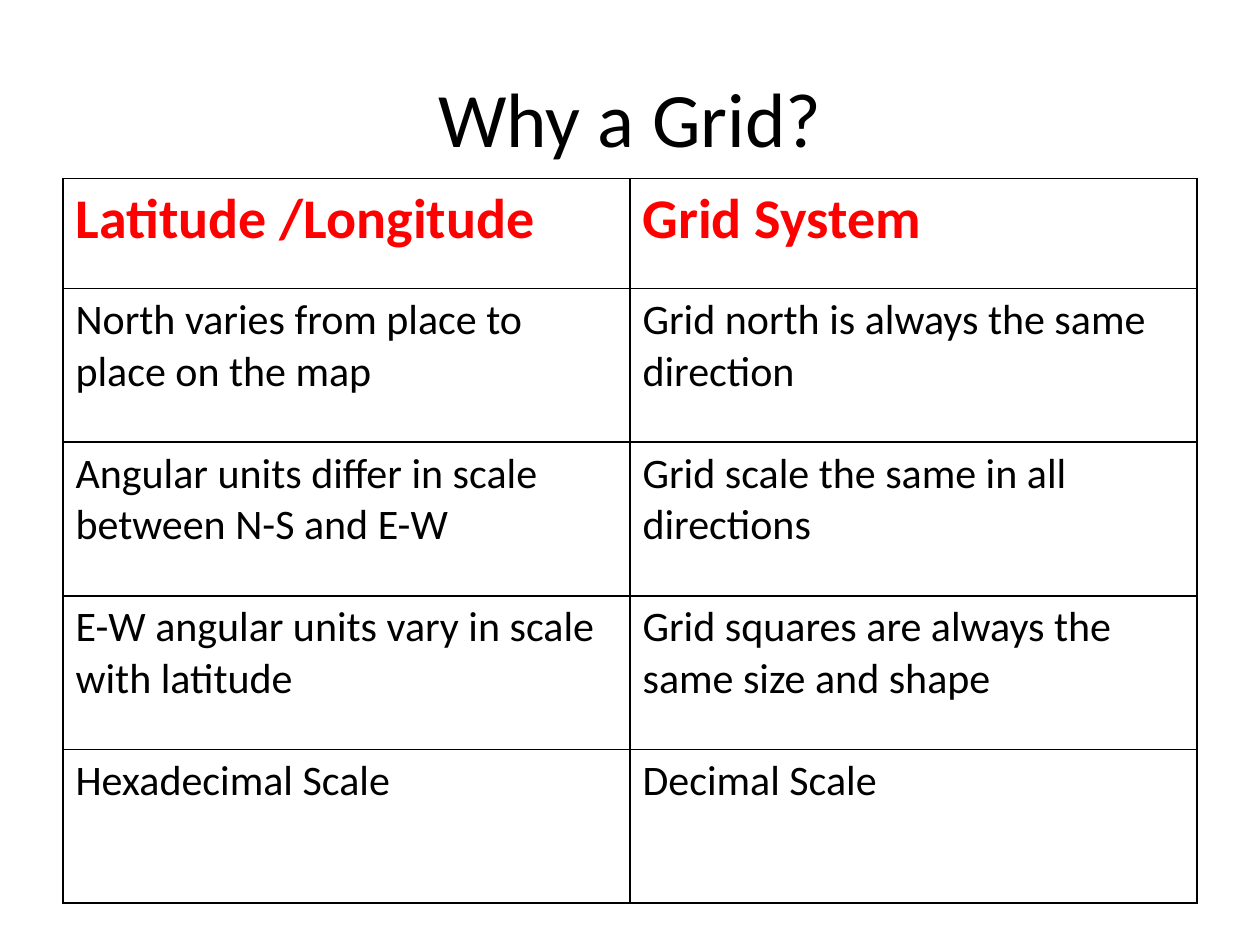
from lxml import etree
from pptx import Presentation
from pptx import util as u
from pptx.dml.color import RGBColor
from pptx.enum import text as t
from pptx.oxml import ns

BLACK = RGBColor(0, 0, 0)
WHITE = RGBColor(255, 255, 255)
RED = RGBColor(255, 0, 0)

ROWS = [
    ("Latitude /Longitude", "Grid System"),
    ("North varies from place to place on the map",
     "Grid north is always the same direction"),
    ("Angular units differ in scale between N-S and E-W",
     "Grid scale the same in all directions"),
    ("E-W angular units vary in scale with latitude",
     "Grid squares are always the same size and shape"),
    ("Hexadecimal Scale", "Decimal Scale"),
]


def write(frame, words, font="Calibri", size=24, color=BLACK, bold=False,
          align=t.PP_ALIGN.LEFT):
    """Put one formatted paragraph in a text frame."""
    para = frame.paragraphs[0]
    para.alignment = align
    run = para.add_run()
    run.text = words
    run.font.name = font
    run.font.size = u.Pt(size)
    run.font.color.rgb = color
    run.font.bold = bold


def border(cell, color=BLACK, width=1):
    """Draw a solid line on all four sides of a cell."""
    props = cell._tc.get_or_add_tcPr()
    for side in ("lnL", "lnR", "lnT", "lnB"):
        line = etree.SubElement(props, ns.qn("a:" + side), w=str(u.Pt(width)))
        fill = etree.SubElement(line, ns.qn("a:solidFill"))
        etree.SubElement(fill, ns.qn("a:srgbClr"), val=str(color))


class Deck:
    """Holds the style and the current slide."""

    def __init__(self, slide, font="Calibri"):
        self.slide = slide
        self.font = font

    def title(self, words, left, top, width, height):
        box = self.slide.shapes.title
        box.left, box.top = u.Pt(left), u.Pt(top)
        box.width, box.height = u.Pt(width), u.Pt(height)
        box.text_frame.vertical_anchor = t.MSO_ANCHOR.MIDDLE
        write(box.text_frame, words, font=self.font, size=44,
              align=t.PP_ALIGN.CENTER)

    def table(self, rows, left, top, width, head, body):
        height = head + body * (len(rows) - 1)
        grid = self.slide.shapes.add_table(
            len(rows), len(rows[0]), u.Pt(left), u.Pt(top),
            u.Pt(width), u.Pt(height)).table
        for r, row in enumerate(rows):
            first = r == 0
            grid.rows[r].height = u.Pt(head if first else body)
            for c, words in enumerate(row):
                cell = grid.cell(r, c)
                border(cell)
                cell.fill.solid()
                cell.fill.fore_color.rgb = WHITE
                write(cell.text_frame, words, font=self.font, bold=first,
                      size=32 if first else 24, color=RED if first else BLACK)


def main():
    prs = Presentation()
    prs.slide_width, prs.slide_height = u.Pt(720), u.Pt(540)
    deck = Deck(prs.slides.add_slide(prs.slide_layouts[5]))

    # Heading
    deck.title("Why a Grid?", 36, 21.6, 648, 90)

    # Comparison of the two systems
    deck.table(ROWS, 36, 102, 648, head=63, body=87.75)

    prs.save("out.pptx")


if __name__ == "__main__":
    main()
